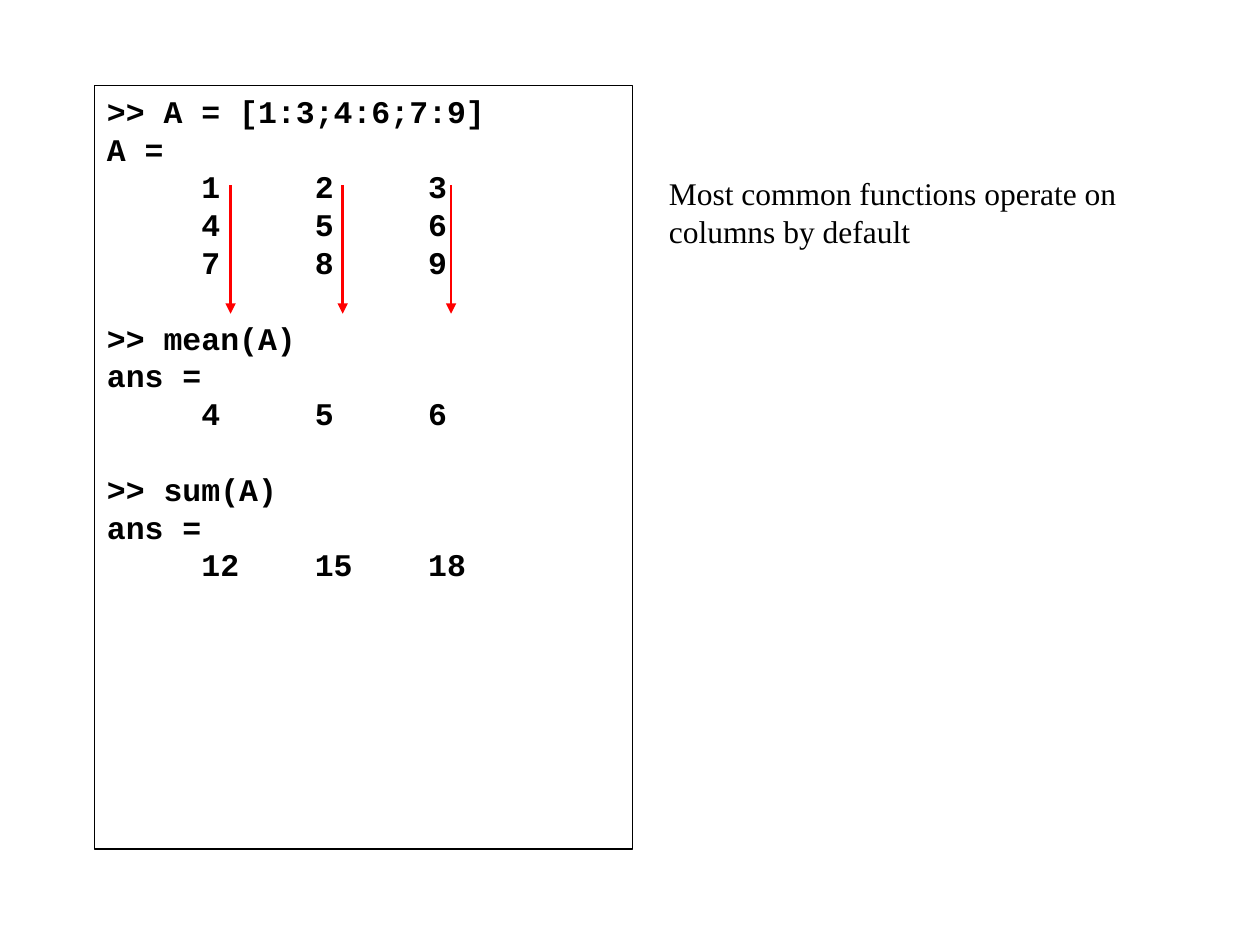
from lxml import etree
from pptx import Presentation
from pptx.dml.color import RGBColor
from pptx.enum.shapes import MSO_CONNECTOR, MSO_SHAPE
from pptx.enum.text import MSO_ANCHOR, MSO_AUTO_SIZE, PP_ALIGN
from pptx.oxml.ns import qn
from pptx.util import Inches, Pt

RECTANGLE = MSO_SHAPE.RECTANGLE
STRAIGHT = MSO_CONNECTOR.STRAIGHT
TOP = MSO_ANCHOR.TOP
LEFT = PP_ALIGN.LEFT
GROW = MSO_AUTO_SIZE.SHAPE_TO_FIT_TEXT

COLORS = {"paper": "FFFFFF", "ink": "000000", "arrow": "FF0000"}
CODE_FONT, NOTE_FONT = "Courier New", "Times New Roman"
TEXT_SIZE, LINE_HEIGHT = 18, 21.6

# Each block is one command with its output
CODE_BLOCKS = [
    [">> A = [1:3;4:6;7:9]", "A =",
     "     1     2     3", "     4     5     6", "     7     8     9"],
    [">> mean(A)", "ans =", "     4     5     6"],
    [">> sum(A)", "ans =", "     12    15    18"],
]
NOTE = "Most common functions operate on columns by default"
ARROW_COLUMNS = [1.83, 2.72, 3.58]
ARROW_TOP, ARROW_BOTTOM = 1.47, 2.49


def color(name):
    return RGBColor.from_string(COLORS[name])


class SlideBuilder:
    """Holds the current slide; lengths are on a grid of one-inch cells."""

    def __init__(self, page):
        self.page = page

    def add_line(self, frame, text, font, bold=False, first=False, gap=0):
        para = frame.paragraphs[0] if first else frame.add_paragraph()
        para.alignment = LEFT
        para.line_spacing = Pt(LINE_HEIGHT)
        if gap:
            para.space_before = Pt(gap)
        span = para.add_run()
        span.text = text
        span.font.name = font
        span.font.size = Pt(TEXT_SIZE)
        span.font.bold = bold
        span.font.color.rgb = color("ink")

    def code(self, left, top, width, height, blocks):
        box = self.page.shapes.add_shape(
            RECTANGLE, *map(Inches, (left, top, width, height)))
        box.shadow.inherit = False
        box.fill.solid()
        box.fill.fore_color.rgb = color("paper")
        box.line.color.rgb = color("ink")
        box.line.width = Pt(0.75)
        frame = box.text_frame
        frame.word_wrap = True
        frame.vertical_anchor = TOP
        for block_index, block in enumerate(blocks):
            for line_index, line in enumerate(block):
                starts_block = line_index == 0
                self.add_line(frame, line, CODE_FONT, bold=True,
                              first=starts_block and block_index == 0,
                              gap=LINE_HEIGHT if starts_block and block_index else 0)

    def note(self, left, top, width, height, text):
        box = self.page.shapes.add_textbox(
            *map(Inches, (left, top, width, height)))
        frame = box.text_frame
        frame.word_wrap = True
        frame.auto_size = GROW
        self.add_line(frame, text, NOTE_FONT, first=True)

    def down_arrow(self, column, top, bottom):
        arrow = self.page.shapes.add_connector(
            STRAIGHT, *map(Inches, (column, top, column, bottom)))
        arrow.line.color.rgb = color("arrow")
        arrow.line.width = Pt(1.5)
        properties = arrow._element.spPr
        etree.SubElement(properties.find(qn("a:ln")), qn("a:tailEnd"), type="triangle")
        etree.SubElement(properties, qn("a:effectLst"))


def main():
    deck = Presentation()
    deck.slide_width, deck.slide_height = Inches(10), Inches(7.5)
    builder = SlideBuilder(deck.slides.add_slide(deck.slide_layouts[6]))

    # Command window
    builder.code(0.75, 0.68, 4.27, 6.06, CODE_BLOCKS)

    # One arrow down each matrix column
    for column in ARROW_COLUMNS:
        builder.down_arrow(column, ARROW_TOP, ARROW_BOTTOM)

    # Explanation
    builder.note(5.21, 1.33, 4.35, 0.7, NOTE)

    deck.save("out.pptx")


if __name__ == "__main__":
    main()
